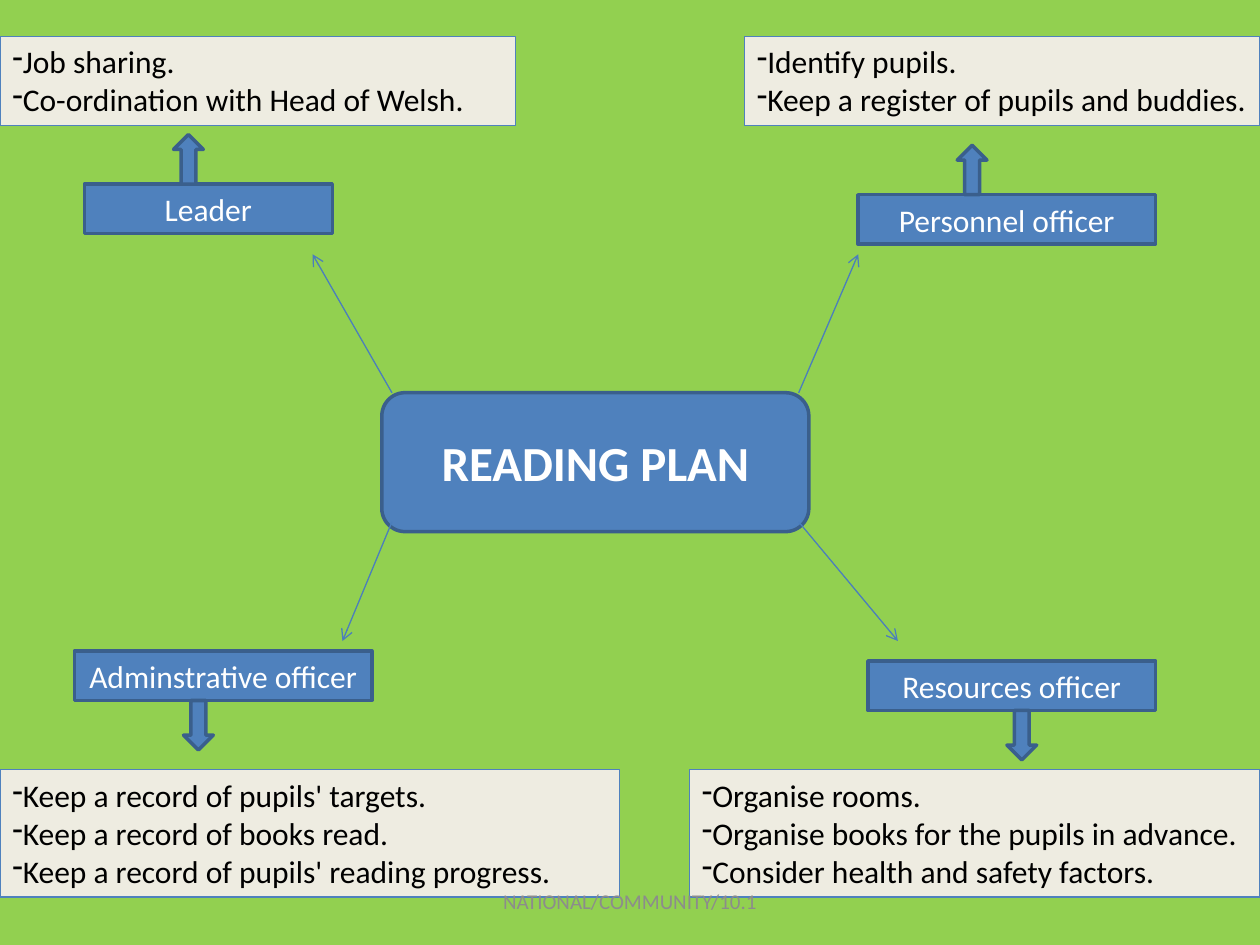
from pptx import Presentation
from pptx.dml.color import RGBColor
from pptx.enum.shapes import MSO_CONNECTOR, MSO_SHAPE
from pptx.enum.text import MSO_ANCHOR, PP_ALIGN
from pptx.oxml.ns import qn
from pptx.util import Pt
from lxml import etree

RECT, ROUNDED = MSO_SHAPE.RECTANGLE, MSO_SHAPE.ROUNDED_RECTANGLE
UP, DOWN = MSO_SHAPE.UP_ARROW, MSO_SHAPE.DOWN_ARROW
STRAIGHT = MSO_CONNECTOR.STRAIGHT
LEFT, CENTER = PP_ALIGN.LEFT, PP_ALIGN.CENTER
TOP, MIDDLE = MSO_ANCHOR.TOP, MSO_ANCHOR.MIDDLE

THEME = {
    "font": "Calibri", "background": "92D050",
    "blue": "4F81BD", "edge": "3A5F8C", "spoke": "4B7EBC", "cream": "EEECE1",
    "white": "FFFFFF", "black": "000000", "grey": "8C8C8C",
    "title": 28, "body": 18, "footer": 12, "thick": 2, "thin": 0.75,
}

PAGE_WIDTH, PAGE_HEIGHT = 720, 540
ROLE_HEIGHT, ARROW_WIDTH = 28.3, 17
TOP_LIST, BOTTOM_LIST = (20.7, 50.9), (439.9, 72.7)  # top, height

TITLE = ("READING PLAN", (218.2, 224.4, 244, 79.4))
FOOTER = ("NATIONAL/COMMUNITY/10.1", (246, 500.5, 228, 28.75))

# role: left, top, width; arrow: direction, left; spoke: start, end
BRANCHES = [
    {"name": "Leader", "role": (48.2, 105.2, 141.7), "arrow": (UP, 99.2),
     "spoke": ((224, 224.5), (178.6, 145.3)), "side": LEFT, "width": 294.6,
     "duties": ["Job sharing.", "Co-ordination with Head of Welsh."]},
    {"name": "Personnel officer", "role": (490.3, 111.3, 170), "arrow": (UP, 547),
     "spoke": ((456.4, 224.5), (490.4, 145.3)), "side": None, "width": 294.6,
     "duties": ["Identify pupils.", "Keep a register of pupils and buddies."]},
    {"name": "Adminstrative officer", "role": (42.5, 372, 170), "arrow": (DOWN, 104.9),
     "spoke": ((224, 298.2), (195.7, 366.3)), "side": LEFT, "width": 354.2,
     "duties": ["Keep a record of pupils' targets.", "Keep a record of books read.",
                "Keep a record of pupils' reading progress."]},
    {"name": "Resources officer", "role": (496, 377.7, 164.4), "arrow": (DOWN, 575.4),
     "spoke": ((456.4, 298.2), (513.1, 366.3)), "side": None, "width": 326,
     "duties": ["Organise rooms.", "Organise books for the pupils in advance.",
                "Consider health and safety factors."]},
]


def color(name):
    return RGBColor.from_string(THEME[name])


def add_box(page, kind, place, fill="blue", line="edge", weight="thick"):
    box = page.shapes.add_shape(kind, *map(Pt, place))
    box.shadow.inherit = False
    box.fill.solid()
    box.fill.fore_color.rgb = color(fill)
    box.line.color.rgb = color(line)
    box.line.width = Pt(THEME[weight])
    return box


def write(box, lines, size, ink, align=CENTER, anchor=MIDDLE, bold=False):
    frame = box.text_frame
    frame.word_wrap = True
    frame.vertical_anchor = anchor
    for index, line in enumerate(lines):
        para = frame.add_paragraph() if index else frame.paragraphs[0]
        para.text = line
        para.alignment = align
        para.font.name = THEME["font"]
        para.font.size = Pt(THEME[size])
        para.font.color.rgb = color(ink)
        para.font.bold = bold


def add_dashes(box):
    """Give every paragraph a dash bullet that sits tight against its text."""
    for para in box.text_frame.paragraphs:
        properties = para._p.get_or_add_pPr()
        properties.set("marL", "0")
        properties.set("indent", "0")
        bullet = etree.Element(qn("a:buChar"), char="-")
        properties.insert(0, etree.Element(qn("a:buFontTx")))
        properties.insert(1, bullet)


def add_spoke(page, start, end):
    spoke = page.shapes.add_connector(STRAIGHT, *map(Pt, start + end))
    spoke.line.color.rgb = color("spoke")
    spoke.line.width = Pt(THEME["thin"])
    etree.SubElement(spoke.line._get_or_add_ln(), qn("a:tailEnd"), type="arrow")
    etree.SubElement(spoke._element.spPr, qn("a:effectLst"))


def add_branch(page, branch):
    left, top, width = branch["role"]
    role = add_box(page, RECT, (left, top, width, ROLE_HEIGHT))
    write(role, [branch["name"]], "body", "white")

    direction, arrow_left = branch["arrow"]
    offset = -ROLE_HEIGHT if direction == UP else ROLE_HEIGHT
    add_box(page, direction, (arrow_left, top + offset, ARROW_WIDTH, ROLE_HEIGHT))
    add_spoke(page, *branch["spoke"])

    list_top, list_height = TOP_LIST if direction == UP else BOTTOM_LIST
    list_left = 0 if branch["side"] == LEFT else PAGE_WIDTH - branch["width"]
    duties = add_box(page, RECT, (list_left, list_top, branch["width"], list_height),
                     "cream", "blue", "thin")
    write(duties, branch["duties"], "body", "black", LEFT, TOP)
    add_dashes(duties)


def main():
    deck = Presentation()
    deck.slide_width, deck.slide_height = Pt(PAGE_WIDTH), Pt(PAGE_HEIGHT)
    page = deck.slides.add_slide(deck.slide_layouts[6])
    page.background.fill.solid()
    page.background.fill.fore_color.rgb = color("background")

    text, place = TITLE
    write(add_box(page, ROUNDED, place), [text], "title", "white", bold=True)
    for branch in BRANCHES:
        add_branch(page, branch)

    text, place = FOOTER
    write(page.shapes.add_textbox(*map(Pt, place)), [text], "footer", "grey")
    deck.save("out.pptx")


if __name__ == "__main__":
    main()
